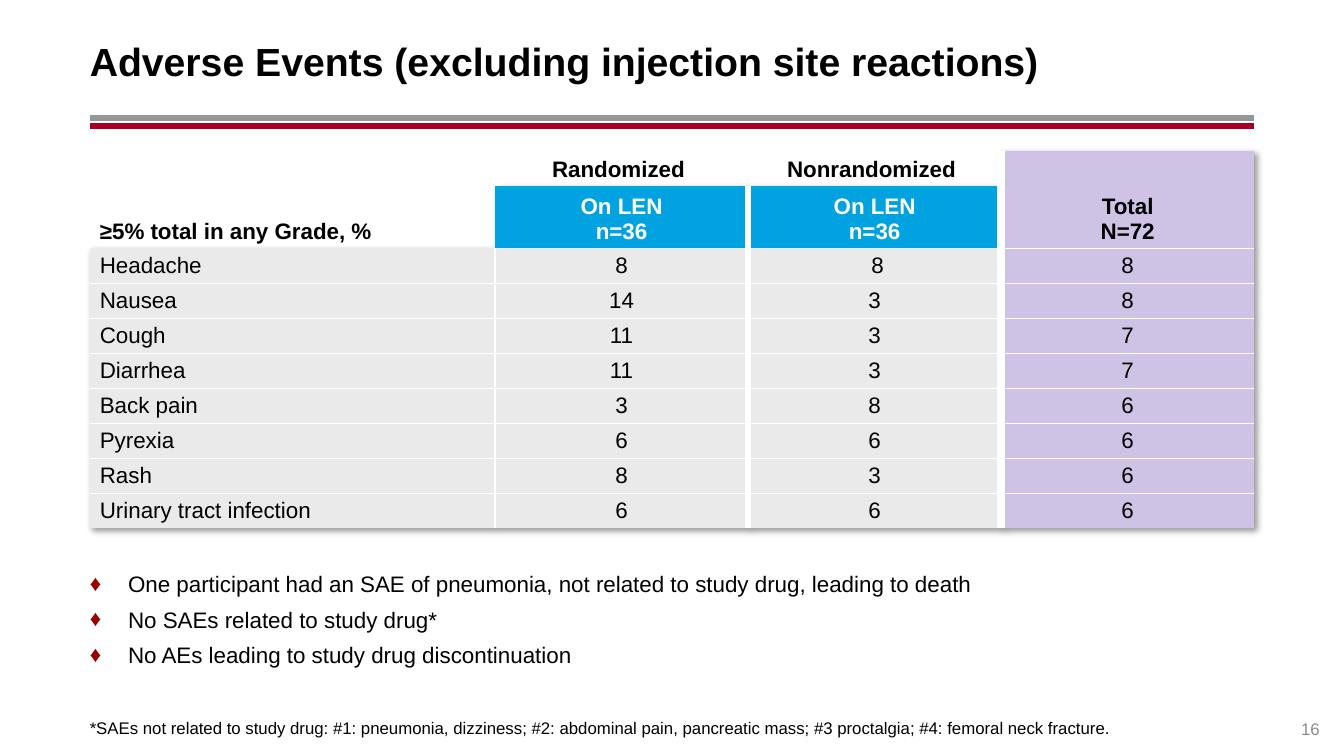
import dataclasses

import lxml.etree
import pptx
import pptx.dml.color
import pptx.enum.shapes
import pptx.enum.text
import pptx.oxml
import pptx.oxml.ns
import pptx.util

Inches = pptx.util.Inches
Pt = pptx.util.Pt
Align = pptx.enum.text.PP_ALIGN
Anchor = pptx.enum.text.MSO_ANCHOR
qn = pptx.oxml.ns.qn

NAMESPACE = 'xmlns:a="http://schemas.openxmlformats.org/drawingml/2006/main"'
PLAIN_TABLE_STYLE = "{2D5ABB26-0587-4C30-8999-92F81FD0307C}"


@dataclasses.dataclass(frozen=True)
class Theme:
    font: str = "Arial"
    black: str = "000000"
    white: str = "FFFFFF"
    rule_gray: str = "969696"
    rule_red: str = "A50021"
    bullet: str = "990000"
    page_number: str = "8C8C8C"
    header_fill: str = "00A3E0"
    body_fill: str = "EAEAEA"
    total_fill: str = "CEC3E5"
    title_size: int = 28
    text_size: int = 16
    note_size: int = 12


def rgb(value):
    return pptx.dml.color.RGBColor.from_string(value)


class SlideBuilder:
    def __init__(self, slide, theme):
        self.slide = slide
        self.theme = theme

    def style(self, paragraph, size, color, bold=False, align=Align.LEFT):
        paragraph.alignment = align
        font = paragraph.font
        font.name = self.theme.font
        font.size = Pt(size)
        font.bold = bold
        font.color.rgb = rgb(color)

    def rule(self, left, right, y, color):
        line = self.slide.shapes.add_connector(
            pptx.enum.shapes.MSO_CONNECTOR.STRAIGHT,
            Inches(left), Inches(y), Inches(right), Inches(y))
        line.line.color.rgb = rgb(color)
        line.line.width = Pt(4.25)
        lxml.etree.SubElement(line._element.spPr, qn("a:effectLst"))

    def text(self, box, content, size, color, bold=False, align=Align.LEFT,
             anchor=Anchor.TOP, margins=(0, 0, 0, 0)):
        shape = self.slide.shapes.add_textbox(*map(Inches, box))
        frame = shape.text_frame
        frame.word_wrap = True
        frame.vertical_anchor = anchor
        (frame.margin_left, frame.margin_top,
         frame.margin_right, frame.margin_bottom) = map(Inches, margins)
        frame.text = content
        for paragraph in frame.paragraphs:
            self.style(paragraph, size, color, bold, align)
        return frame

    def bullets(self, box, items, margins):
        frame = self.text(box, "\n".join(items), self.theme.text_size,
                          self.theme.black, margins=margins)
        for paragraph in frame.paragraphs:
            paragraph.space_before = Pt(6)
            properties = paragraph._p.get_or_add_pPr()
            properties.set("marL", str(Inches(0.38)))
            properties.set("indent", str(-Inches(0.38)))
            color = lxml.etree.SubElement(properties, qn("a:buClr"))
            lxml.etree.SubElement(color, qn("a:srgbClr"), val=self.theme.bullet)
            lxml.etree.SubElement(properties, qn("a:buFont"), typeface=self.theme.font)
            lxml.etree.SubElement(properties, qn("a:buChar"), char="♦")
            # Bullet settings must come before the default run settings
            default_run = properties.find(qn("a:defRPr"))
            if default_run is not None:
                properties.append(default_run)

    def table(self, box, widths, heights):
        frame = self.slide.shapes.add_table(
            len(heights), len(widths), *map(Inches, box))
        table = frame.table
        table.first_row = table.horz_banding = False
        for column, width in zip(table.columns, widths):
            column.width = Inches(width)
        for row, height in zip(table.rows, heights):
            row.height = Inches(height)
        properties = table._tbl.tblPr
        properties.find(qn("a:tableStyleId")).text = PLAIN_TABLE_STYLE
        properties.insert(0, pptx.oxml.parse_xml(
            f'<a:effectLst {NAMESPACE}><a:outerShdw blurRad="50800" dist="38100" '
            'dir="2700000" algn="tl" rotWithShape="0"><a:srgbClr val="000000">'
            '<a:alpha val="40000"/></a:srgbClr></a:outerShdw></a:effectLst>'))
        return table

    def cell(self, cell, content, fill=None, color=None, bold=False,
             align=Align.CENTER, anchor=Anchor.MIDDLE, borders=()):
        cell.margin_top = cell.margin_bottom = Inches(0.04)
        cell.margin_left = cell.margin_right = Inches(0.1)
        cell.vertical_anchor = anchor
        cell.text = content
        for paragraph in cell.text_frame.paragraphs:
            self.style(paragraph, self.theme.text_size,
                       color or self.theme.black, bold, align)
        if fill:
            cell.fill.solid()
            cell.fill.fore_color.rgb = rgb(fill)
        else:
            cell.fill.background()
        sides = dict(borders)
        visible = [side for side in "LRTB" if sides.get(side)]
        for position, side in enumerate(visible):
            cell._tc.get_or_add_tcPr().insert(position, pptx.oxml.parse_xml(
                f'<a:ln{side} {NAMESPACE} w="{Pt(sides[side])}"><a:solidFill>'
                f'<a:srgbClr val="{self.theme.white}"/></a:solidFill></a:ln{side}>'))


def add_events_table(builder, left, width):
    theme = builder.theme
    events = [
        ("Headache", "8", " 8", "8"),
        ("Nausea", "14", "3", "8"),
        ("Cough", "11", "3", "7"),
        ("Diarrhea", "11", "3", "7"),
        ("Back pain", "3", "8", "6"),
        ("Pyrexia", "6", "6", "6"),
        ("Rash", "8", "3", "6"),
        ("Urinary tract infection", "6", "6", "6"),
    ]
    group_height, arm_height, events_height = 0.35, 0.59, 2.78
    heights = [group_height, arm_height] + [events_height / len(events)] * len(events)
    table = builder.table((left, 1.5, width, sum(heights)),
                          (4.02, 2.51, 2.51, 2.51), heights)
    gaps = (0, 1, 4.5, 6, 0)  # white gap at each column edge, in points

    # Two header rows, with the total spanning both
    header = {"bold": True, "anchor": Anchor.BOTTOM}
    table.cell(0, 3).merge(table.cell(1, 3))
    builder.cell(table.cell(0, 0), "", **header)
    builder.cell(table.cell(0, 1), "Randomized ", **header)
    builder.cell(table.cell(0, 2), "Nonrandomized ", borders={"R": 6}, **header)
    builder.cell(table.cell(0, 3), "Total\nN=72", theme.total_fill,
                 borders={"L": 6, "B": 1}, **header)
    builder.cell(table.cell(1, 0), "≥5% total in any Grade, %",
                 align=Align.LEFT, **header)
    for column in (1, 2):
        builder.cell(table.cell(1, column), "On LEN\nn=36", theme.header_fill,
                     theme.white, borders={"R": gaps[column + 1]}, **header)

    # One row per event
    for row, event in enumerate(events, start=2):
        for column, value in enumerate(event):
            borders = {"L": gaps[column], "R": gaps[column + 1],
                       "T": int(row > 2 or column == 3),
                       "B": int(row < len(heights) - 1)}
            builder.cell(table.cell(row, column), value,
                         theme.total_fill if column == 3 else theme.body_fill,
                         align=Align.CENTER if column else Align.LEFT,
                         borders=borders)


def main():
    presentation = pptx.Presentation()
    presentation.slide_width = Inches(13.33)
    presentation.slide_height = Inches(7.5)
    theme = Theme()
    builder = SlideBuilder(
        presentation.slides.add_slide(presentation.slide_layouts[6]), theme)
    left, width = 0.89, 11.55
    right = left + width
    margins = (0, 0.05, 0.1, 0.05)

    # Title and double rule
    builder.rule(left, right, 1.17, theme.rule_gray)
    builder.rule(left, right, 1.25, theme.rule_red)
    builder.text((left, 0.17, width, 0.86),
                 "Adverse Events (excluding injection site reactions)",
                 theme.title_size, theme.black, bold=True,
                 anchor=Anchor.MIDDLE, margins=margins)

    # Key findings
    builder.bullets((left, 5.61, width, 1.01), [
        "One participant had an SAE of pneumonia, not related to study drug, leading to death",
        "No SAEs related to study drug*",
        "No AEs leading to study drug discontinuation",
    ], margins)

    # Footnote and page number
    builder.text((left, 6.77, width, 0.55),
                 "*SAEs not related to study drug: #1: pneumonia, dizziness; "
                 "#2: abdominal pain, pancreatic mass; #3 proctalgia; "
                 "#4: femoral neck fracture.",
                 theme.note_size, theme.black, anchor=Anchor.BOTTOM)
    builder.text((right, 6.93, 0.65, 0.4), "16", theme.note_size,
                 theme.page_number, align=Align.RIGHT, anchor=Anchor.BOTTOM)

    add_events_table(builder, left, width)
    presentation.save("out.pptx")


if __name__ == "__main__":
    main()
